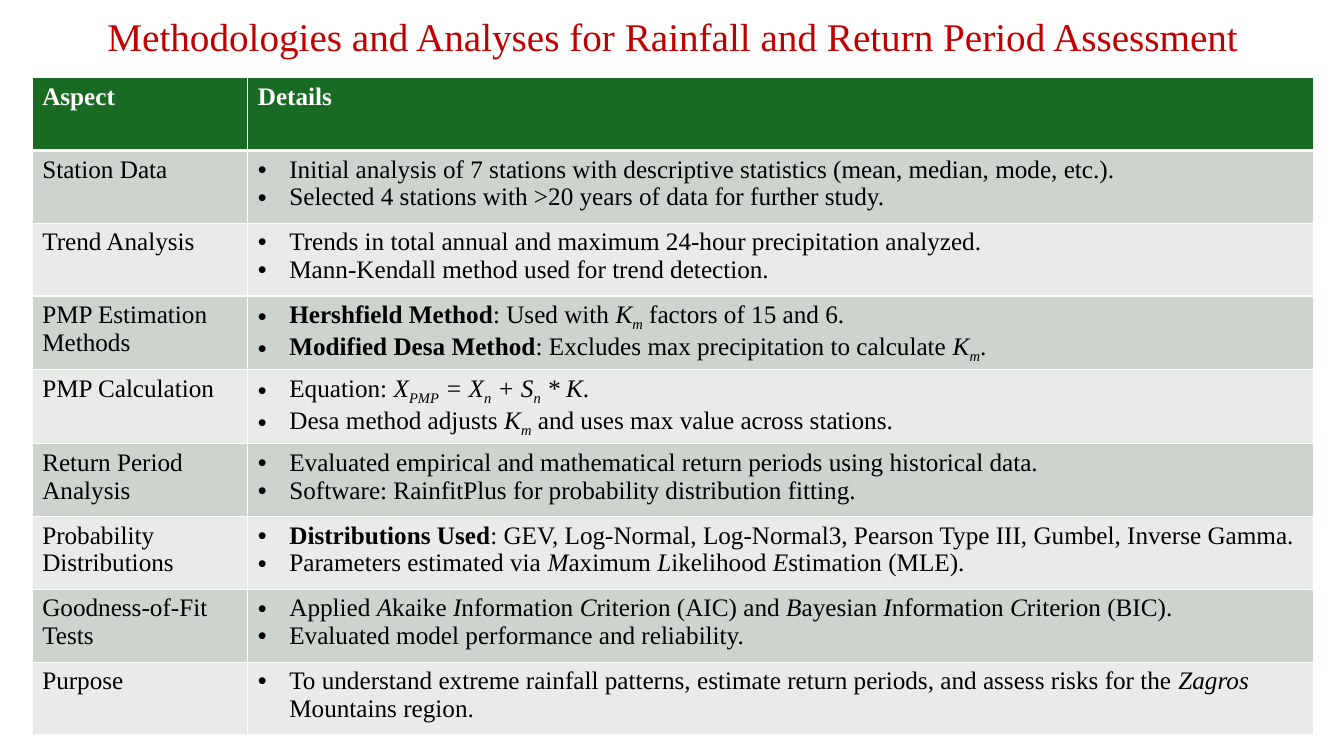
from lxml.etree import SubElement
from pptx import Presentation
from pptx.dml.color import RGBColor
from pptx.enum.text import MSO_ANCHOR, MSO_AUTO_SIZE, PP_ALIGN
from pptx.oxml.ns import qn
from pptx.util import Pt

RED = RGBColor(0xC0, 0x00, 0x00)
GREEN = RGBColor(0x19, 0x6B, 0x24)
SAGE = RGBColor(0xCC, 0xD4, 0xCD)
PALE = RGBColor(0xE8, 0xEB, 0xE8)
WHITE = RGBColor(0xFF, 0xFF, 0xFF)
BLACK = RGBColor(0x00, 0x00, 0x00)
FONT = "Times New Roman"
BOLD, ITALIC, SUBSCRIPT = "^", "_", "~"

ASPECTS = [
    ("Station Data", [
        "Initial analysis of 7 stations with descriptive statistics (mean, median, mode, etc.).",
        "Selected 4 stations with >20 years of data for further study."]),
    ("Trend Analysis", [
        "Trends in total annual and maximum 24-hour precipitation analyzed.",
        "Mann-Kendall method used for trend detection."]),
    ("PMP Estimation Methods", [
        "^Hershfield Method^: Used with _K~m~_ factors of 15 and 6.",
        "^Modified Desa Method^: Excludes max precipitation to calculate _K~m~_."]),
    ("PMP Calculation", [
        "Equation: _X~PMP~ = X~n~ + S~n~ * K_.",
        "Desa method adjusts _K~m~_ and uses max value across stations."]),
    ("Return Period Analysis", [
        "Evaluated empirical and mathematical return periods using historical data.",
        "Software: RainfitPlus for probability distribution fitting."]),
    ("Probability Distributions", [
        "^Distributions Used^: GEV, Log-Normal, Log-Normal3, Pearson Type III, Gumbel, Inverse Gamma.",
        "Parameters estimated via _M_aximum _L_ikelihood _E_stimation (MLE)."]),
    ("Goodness-of-Fit Tests", [
        "Applied _A_kaike _I_nformation _C_riterion (AIC) and _B_ayesian _I_nformation _C_riterion (BIC).",
        "Evaluated model performance and reliability."]),
    ("Purpose", [
        "To understand extreme rainfall patterns, estimate return periods, and assess risks "
        "for the _Zagros_ Mountains region."]),
]


def write_marked(paragraph, marked, color, bold=False):
    active = {BOLD: bold, ITALIC: False, SUBSCRIPT: False}
    piece = ""
    for char in marked + "\0":
        if char not in active and char != "\0":
            piece += char
            continue
        if piece:
            run = paragraph.add_run()
            run.text = piece
            run.font.name = FONT
            run.font.size = Pt(18)
            run.font.color.rgb = color
            run.font.bold = active[BOLD]
            run.font.italic = active[ITALIC]
            if active[SUBSCRIPT]:
                run.font._element.set("baseline", "-25000")
            piece = ""
        if char in active:
            active[char] = not active[char]


def paint_cell(cell, fill, bottom_width):
    properties = cell._tc.get_or_add_tcPr()
    for side, width in (("L", 1), ("R", 1), ("T", 1), ("B", bottom_width)):
        border = SubElement(properties, qn("a:ln" + side), w=str(Pt(width)))
        SubElement(SubElement(border, qn("a:solidFill")), qn("a:srgbClr"), val=str(WHITE))
    cell.fill.solid()
    cell.fill.fore_color.rgb = fill


presentation = Presentation()
presentation.slide_width = Pt(960)
presentation.slide_height = Pt(540)
slide = presentation.slides.add_slide(presentation.slide_layouts[5])

title = slide.shapes.title
title.left, title.top, title.width, title.height = Pt(60), Pt(8), Pt(841), Pt(39.5)
title.text_frame.text = "Methodologies and Analyses for Rainfall and Return Period Assessment"
title.text_frame.auto_size = MSO_AUTO_SIZE.NONE
title.text_frame.vertical_anchor = MSO_ANCHOR.MIDDLE
heading = title.text_frame.paragraphs[0]
heading.alignment = PP_ALIGN.CENTER
heading.line_spacing = 0.9
heading.runs[0].font.name = FONT
heading.runs[0].font.size = Pt(28)
heading.runs[0].font.color.rgb = RED

row_count = len(ASPECTS) + 1
methods = slide.shapes.add_table(
    row_count, 2, Pt(23), Pt(55.5), Pt(915), Pt(52 * row_count)).table
methods.columns[0].width = Pt(154)
methods.columns[1].width = Pt(761)
for row in methods.rows:
    row.height = Pt(52)

for column, label in enumerate(("Aspect", "Details")):
    header = methods.cell(0, column)
    paint_cell(header, GREEN, 3)
    write_marked(header.text_frame.paragraphs[0], label, WHITE, bold=True)

for number, (aspect, details) in enumerate(ASPECTS, start=1):
    aspect_cell, details_cell = methods.cell(number, 0), methods.cell(number, 1)
    for cell in (aspect_cell, details_cell):
        paint_cell(cell, SAGE if number % 2 else PALE, 1)
    write_marked(aspect_cell.text_frame.paragraphs[0], aspect, BLACK)
    for position, detail in enumerate(details):
        frame = details_cell.text_frame
        paragraph = frame.add_paragraph() if position else frame.paragraphs[0]
        layout = paragraph._p.get_or_add_pPr()
        layout.set("marL", str(Pt(22.5)))
        layout.set("indent", str(-Pt(22.5)))
        SubElement(layout, qn("a:buFont"), typeface="Arial")
        SubElement(layout, qn("a:buChar"), char="•")
        write_marked(paragraph, detail, BLACK)

presentation.save("out.pptx")
